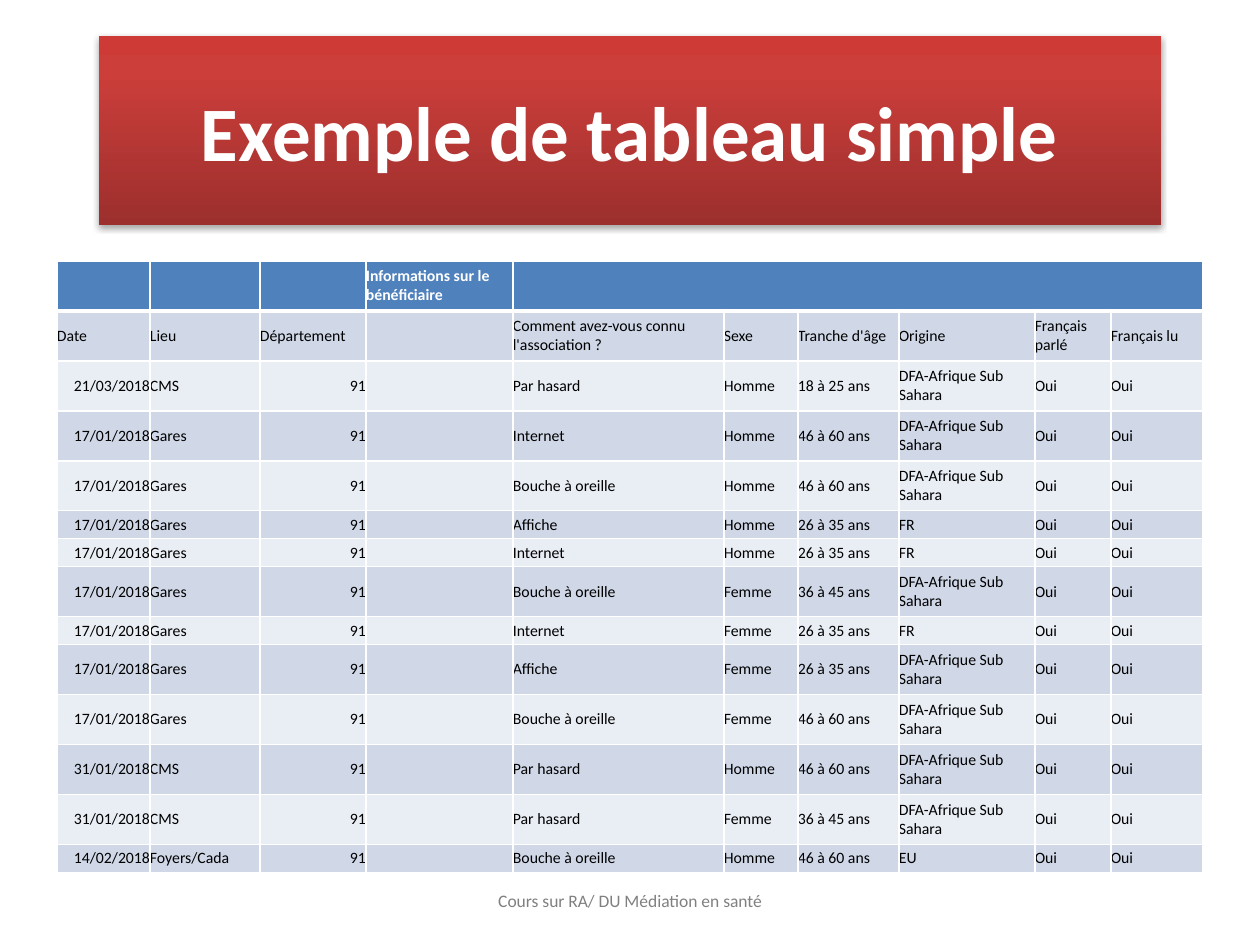
from lxml.etree import SubElement
from pptx import Presentation
from pptx.dml.color import RGBColor
from pptx.enum.text import MSO_ANCHOR as Anchor, PP_ALIGN as Align
from pptx.oxml import parse_xml
from pptx.oxml.ns import nsdecls, qn
from pptx.util import Emu, Pt

FONT = "Calibri"
WHITE = RGBColor(0xFF, 0xFF, 0xFF)
BLACK = RGBColor(0x00, 0x00, 0x00)
GREY = RGBColor(0x80, 0x80, 0x80)
BLUE = RGBColor(0x4F, 0x81, 0xBD)
BAND_DARK = RGBColor(0xD0, 0xD8, 0xE8)
BAND_LIGHT = RGBColor(0xE9, 0xED, 0xF4)
RED_STOPS = [(0, RGBColor(0x9C, 0x2F, 0x2D)),
             (80, RGBColor(0xCB, 0x3E, 0x3A)),
             (100, RGBColor(0xCE, 0x3B, 0x37))]

COLUMN_WIDTHS = [93, 110, 106, 147, 211, 74, 101, 136, 76, 92]
TALL_ROW, SHORT_ROW = 50, 28
CELL_SIZE = 9
GROUP_COLUMN = 3  # holds only the group heading
AFRICA = "DFA-Afrique Sub Sahara"

HEADINGS = ["Date", "Lieu", "Département", "",
            "Comment avez-vous connu l'association ?", "Sexe",
            "Tranche d'âge", "Origine", "Français parlé", "Français lu"]

# Date, place, how they heard of us, sex, age range, origin
VISITS = [
    ("21/03/2018", "CMS", "Par hasard", "Homme", "18 à 25 ans", AFRICA),
    ("17/01/2018", "Gares", "Internet", "Homme", "46 à 60 ans", AFRICA),
    ("17/01/2018", "Gares", "Bouche à oreille", "Homme", "46 à 60 ans", AFRICA),
    ("17/01/2018", "Gares", "Affiche", "Homme", "26 à 35 ans", "FR"),
    ("17/01/2018", "Gares", "Internet", "Homme", "26 à 35 ans", "FR"),
    ("17/01/2018", "Gares", "Bouche à oreille", "Femme", "36 à 45 ans", AFRICA),
    ("17/01/2018", "Gares", "Internet", "Femme", "26 à 35 ans", "FR"),
    ("17/01/2018", "Gares", "Affiche", "Femme", "26 à 35 ans", AFRICA),
    ("17/01/2018", "Gares", "Bouche à oreille", "Femme", "46 à 60 ans", AFRICA),
    ("31/01/2018", "CMS", "Par hasard", "Homme", "46 à 60 ans", AFRICA),
    ("31/01/2018", "CMS", "Par hasard", "Femme", "36 à 45 ans", AFRICA),
    ("14/02/2018", "Foyers/Cada", "Bouche à oreille", "Homme", "46 à 60 ans", "EU"),
]


def px(length):
    return Emu(round(length * 914400 / 126))


def write(para, text, size, color, bold=False, align=Align.LEFT):
    para.alignment = align
    span = para.add_run()
    span.text = text
    span.font.name = FONT
    span.font.size = Pt(size)
    span.font.bold = bold
    span.font.color.rgb = color


def add_title(page, box, text):
    title = page.shapes.title
    title.left, title.top, title.width, title.height = map(px, box)
    title.text_frame.vertical_anchor = Anchor.MIDDLE
    write(title.text_frame.paragraphs[0], text, 44, WHITE, True, Align.CENTER)

    # Red gradient from bottom to top, with a soft shadow below
    stops = "".join(f'<a:gs pos="{place * 1000}"><a:srgbClr val="{color}"/></a:gs>'
                    for place, color in RED_STOPS)
    parts = [
        f'<a:prstGeom {nsdecls("a")} prst="rect"><a:avLst/></a:prstGeom>',
        f'<a:gradFill {nsdecls("a")} rotWithShape="1"><a:gsLst>{stops}</a:gsLst>'
        '<a:lin ang="16200000" scaled="0"/></a:gradFill>',
        f'<a:effectLst {nsdecls("a")}><a:outerShdw blurRad="40000" dist="23000" '
        'dir="5400000" rotWithShape="0"><a:srgbClr val="000000">'
        '<a:alpha val="35000"/></a:srgbClr></a:outerShdw></a:effectLst>',
    ]
    for part in parts:
        title._element.spPr.append(parse_xml(part))


def set_borders(cell, top=1, bottom=1):
    properties = cell._tc.get_or_add_tcPr()
    widths = {"lnL": 1, "lnR": 1, "lnT": top, "lnB": bottom}
    for place, (side, width) in enumerate(widths.items()):
        properties.insert(place, parse_xml(
            f'<a:{side} {nsdecls("a")} w="{Pt(width)}"><a:solidFill>'
            f'<a:srgbClr val="{WHITE}"/></a:solidFill></a:{side}>'))


def fill_cell(cell, text, fill, color=BLACK, bold=False, align=Align.LEFT):
    cell.margin_left = cell.margin_right = cell.margin_top = cell.margin_bottom = 0
    cell.vertical_anchor = Anchor.MIDDLE
    cell.fill.solid()
    cell.fill.fore_color.rgb = fill
    para = cell.text_frame.paragraphs[0]
    if text:
        write(para, text, CELL_SIZE, color, bold, align)
    else:  # keeps an empty cell from stretching its row
        SubElement(para._p, qn("a:endParaRPr"), sz=str(CELL_SIZE * 100))


def add_visits_table(page, left, top):
    visits = [[date, place, "91", "", source, sex, age, origin, "Oui", "Oui"]
              for date, place, source, sex, age, origin in VISITS]
    heights = [TALL_ROW] * 2 + [TALL_ROW if visit[5] == AFRICA else SHORT_ROW
                                for visit in VISITS]
    frame = page.shapes.add_table(len(heights), len(COLUMN_WIDTHS), px(left), px(top),
                                  px(sum(COLUMN_WIDTHS)), px(sum(heights)))
    table = frame.table
    for column, width in zip(table.columns, COLUMN_WIDTHS):
        column.width = px(width)
    for row, height in zip(table.rows, heights):
        row.height = px(height)

    # Group heading row
    for number in range(len(COLUMN_WIDTHS)):
        text = "Informations sur le bénéficiaire" if number == GROUP_COLUMN else ""
        cell = table.cell(0, number)
        fill_cell(cell, text, BLUE, WHITE, True)
        set_borders(cell, bottom=3)
    table.cell(0, GROUP_COLUMN + 1).merge(table.cell(0, len(COLUMN_WIDTHS) - 1))

    # Column headings and banded visits
    for row, texts in enumerate([HEADINGS] + visits, start=1):
        band = BAND_DARK if row % 2 else BAND_LIGHT
        for number, text in enumerate(texts):
            is_figure = row > 1 and number in (0, 2)
            cell = table.cell(row, number)
            fill_cell(cell, text, band, align=Align.RIGHT if is_figure else Align.LEFT)
            set_borders(cell, top=3 if row == 1 else 1)


def add_footer(page, box, text):
    footer = page.shapes.add_textbox(*map(px, box)).text_frame
    footer.word_wrap = True
    footer.vertical_anchor = Anchor.MIDDLE
    para = footer.paragraphs[0]
    para.space_after = Pt(6)
    write(para, text, 10, GREY, align=Align.CENTER)


def main():
    deck = Presentation()
    deck.slide_width, deck.slide_height = px(1260), px(945)
    page = deck.slides.add_slide(deck.slide_layouts[5])
    add_title(page, (99, 36, 1062, 189), "Exemple de tableau simple")
    add_footer(page, (417, 876, 426, 50), "Cours sur RA/ DU Médiation en santé")
    add_visits_table(page, 57, 261)
    deck.save("out.pptx")


if __name__ == "__main__":
    main()
